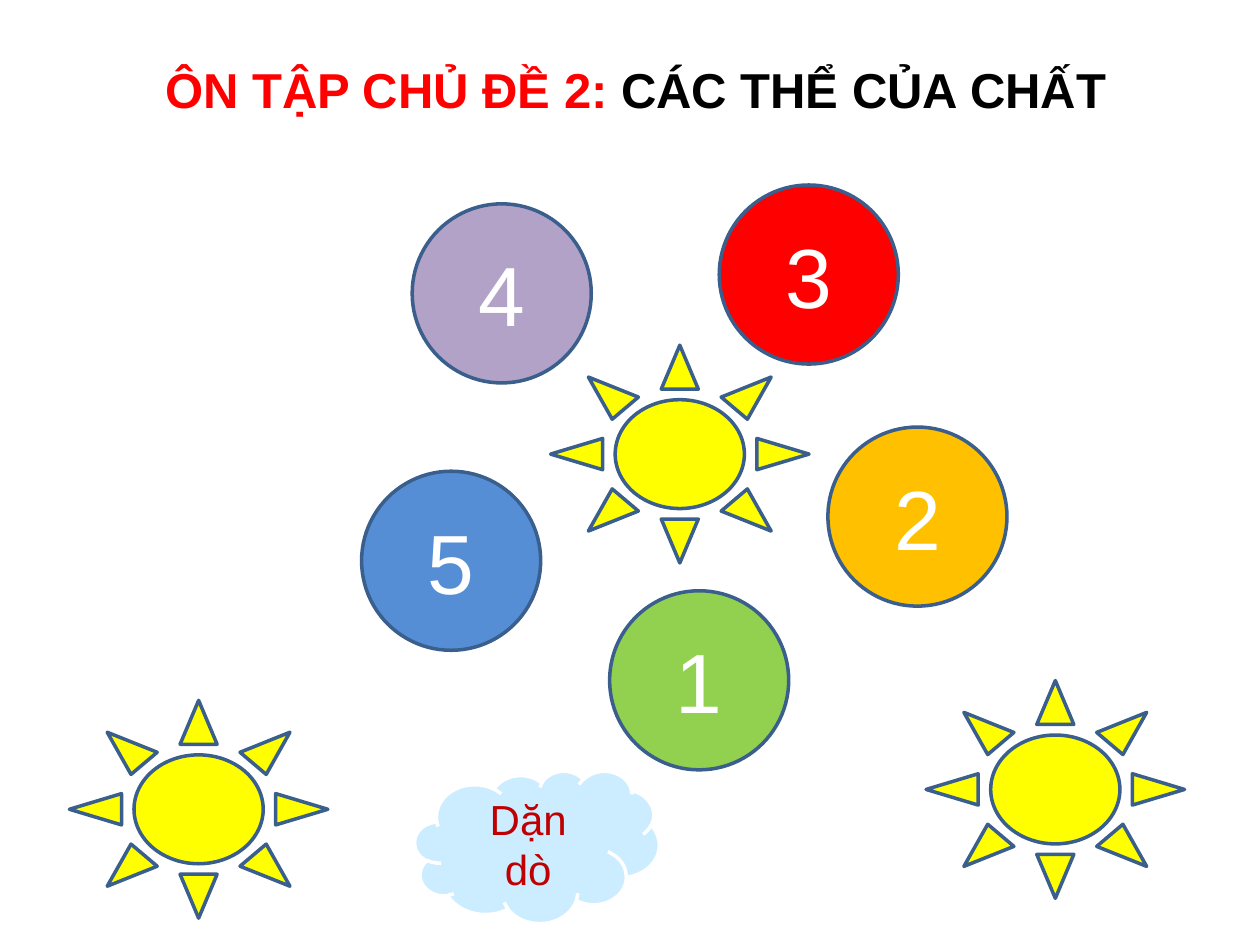
from pptx import Presentation
from pptx.dml.color import RGBColor
from pptx.enum.shapes import MSO_SHAPE
from pptx.enum.text import MSO_ANCHOR, MSO_AUTO_SIZE, PP_ALIGN
from pptx.util import Cm, Pt


def add_run(paragraph, text, size, color, bold=False):
    paragraph.alignment = PP_ALIGN.CENTER
    run = paragraph.add_run()
    run.text = text
    run.font.name = "Arial"
    run.font.size = Pt(size)
    run.font.bold = bold
    run.font.color.rgb = RGBColor.from_string(color)


def add_figure(kind, left, top, width, height, fill, line="3A5F8C"):
    shape = slide.shapes.add_shape(kind, Cm(left), Cm(top), Cm(width), Cm(height))
    shape.shadow.inherit = False
    shape.fill.solid()
    shape.fill.fore_color.rgb = RGBColor.from_string(fill)
    shape.line.color.rgb = RGBColor.from_string(line)
    shape.line.width = Pt(2)
    shape.text_frame.vertical_anchor = MSO_ANCHOR.MIDDLE
    return shape


presentation = Presentation()
presentation.slide_width = Cm(25.4)
presentation.slide_height = Cm(19.05)
slide = presentation.slides.add_slide(presentation.slide_layouts[6])

title = slide.shapes.add_textbox(Cm(2.11), Cm(1.07), Cm(21.41), Cm(1.45))
title.text_frame.word_wrap = True
title.text_frame.auto_size = MSO_AUTO_SIZE.SHAPE_TO_FIT_TEXT
heading = title.text_frame.paragraphs[0]
add_run(heading, "ÔN TẬP CHỦ ĐỀ 2: ", 28, "FF0000", True)
add_run(heading, "CÁC THỂ CỦA CHẤT", 28, "000000", True)

for left, top in [(11.1, 6.96), (1.4, 14.12), (18.67, 13.72)]:
    add_figure(MSO_SHAPE.SUN, left, top, 5.21, 4.39, "FFFF00")

circles = [
    ("4", 8.31, 4.11, "B3A2C7"),
    ("1", 12.29, 11.91, "92D050"),
    ("5", 7.29, 9.5, "558ED5"),
    ("2", 16.69, 8.61, "FFC000"),
    ("3", 14.5, 3.73, "FF0000"),
]
for number, left, top, fill in circles:
    circle = add_figure(MSO_SHAPE.OVAL, left, top, 3.61, 3.61, fill)
    add_run(circle.text_frame.paragraphs[0], number, 48, "FFFFFF")

cloud = add_figure(MSO_SHAPE.CLOUD, 8.36, 15.54, 4.93, 3.07, "CCECFF", "FFFFFF")
add_run(cloud.text_frame.paragraphs[0], "Dặn dò", 24, "C00000")

presentation.save("out.pptx")
